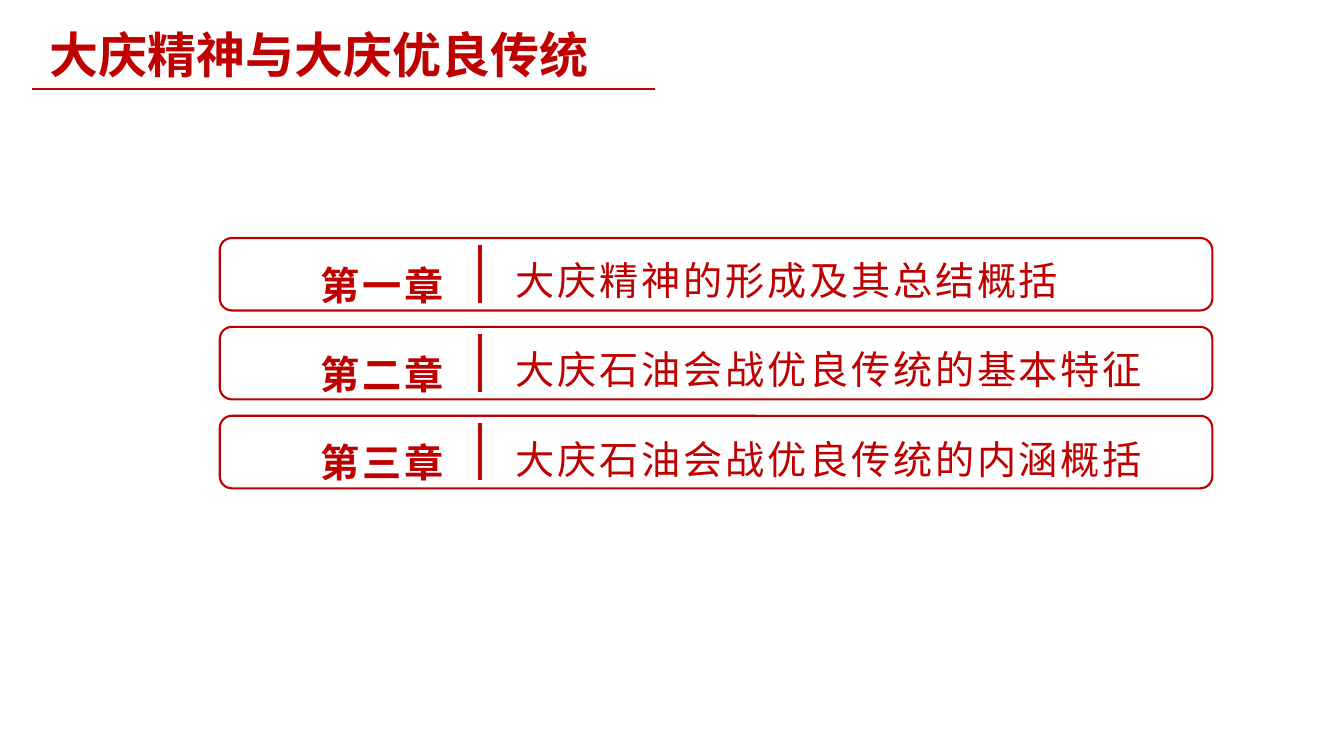
from lxml import etree
from pptx import Presentation
from pptx.dml.color import RGBColor
from pptx.enum.shapes import MSO_CONNECTOR, MSO_SHAPE
from pptx.enum.text import MSO_AUTO_SIZE
from pptx.oxml.ns import qn
from pptx.util import Pt

STRAIGHT = MSO_CONNECTOR.STRAIGHT
ROUNDED = MSO_SHAPE.ROUNDED_RECTANGLE
GROW = MSO_AUTO_SIZE.SHAPE_TO_FIT_TEXT

RED = RGBColor(0xBF, 0x00, 0x00)
FONT = "Noto Sans CJK SC"

CHAPTERS = [
    ("第一章", "大庆精神的形成及其总结概括"),
    ("第二章", "大庆石油会战优良传统的基本特征"),
    ("第三章", "大庆石油会战优良传统的内涵概括"),
]
FIRST_TOP = 170
ROW_PITCH = 63.5
TITLE_TOP = 169.2
TITLE_PITCH = 64


class Page:
    """Draws red elements on one slide; all lengths are in points."""

    def __init__(self, slide, color=RED, font=FONT):
        self.shapes = slide.shapes
        self.color = color
        self.font = font

    def line(self, x1, y1, x2, y2, weight):
        line = self.shapes.add_connector(STRAIGHT, Pt(x1), Pt(y1), Pt(x2), Pt(y2))
        line.line.color.rgb = self.color
        line.line.width = Pt(weight)
        etree.SubElement(line._element.spPr, qn("a:effectLst"))

    def frame(self, left, top, width, height, weight=1.5):
        frame = self.shapes.add_shape(ROUNDED, Pt(left), Pt(top), Pt(width), Pt(height))
        frame.shadow.inherit = False
        frame.fill.background()
        frame.line.color.rgb = self.color
        frame.line.width = Pt(weight)

    def text(self, text, left, top, width, height, size=28, bold=False,
             wrap=True, line_spacing=None, tracking=0):
        box = self.shapes.add_textbox(Pt(left), Pt(top), Pt(width), Pt(height))
        box.text_frame.word_wrap = wrap
        box.text_frame.auto_size = GROW
        para = box.text_frame.paragraphs[0]
        para.line_spacing = line_spacing
        span = para.add_run()
        span.text = text
        span.font.size = Pt(size)
        span.font.bold = bold
        span.font.color.rgb = self.color
        span.font.name = self.font
        properties = span.font._element
        etree.SubElement(properties, qn("a:ea")).set("typeface", self.font)
        if tracking:
            properties.set("spc", str(tracking * 100))


def main():
    deck = Presentation()
    deck.slide_width, deck.slide_height = Pt(960), Pt(540)
    page = Page(deck.slides.add_slide(deck.slide_layouts[6]))

    page.text("大庆精神与大庆优良传统", 28, 13.7, 401, 49.7,
              size=35, bold=True, wrap=False)
    page.line(23, 63.4, 468, 63.4, weight=1.5)

    chapter_style = {"line_spacing": 1.3, "tracking": 2}
    for index, (label, title) in enumerate(CHAPTERS):
        top = FIRST_TOP + index * ROW_PITCH
        page.frame(157, top, 709, 51.8)
        page.line(342.7, top + 5, 342.7, top + 46.2, weight=3)
        page.text(label, 221.8, top + 2.8, 117, 51, bold=True, **chapter_style)
        page.text(title, 361.4, TITLE_TOP + index * TITLE_PITCH, 492, 51,
                  **chapter_style)

    deck.save("out.pptx")


if __name__ == "__main__":
    main()
